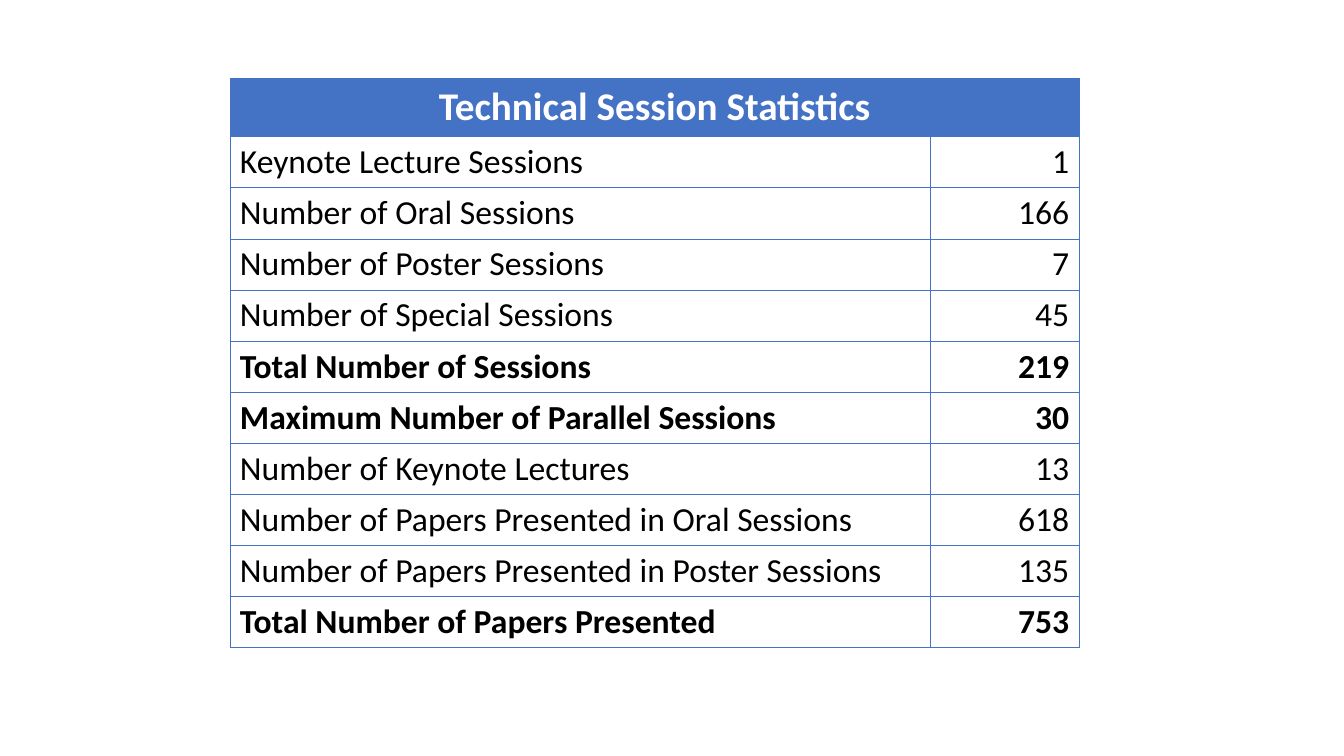
from dataclasses import dataclass

import pptx
import pptx.dml.color
import pptx.enum.text
import pptx.oxml
import pptx.oxml.ns
import pptx.table
import pptx.util

BLUE = pptx.dml.color.RGBColor(0x44, 0x72, 0xC4)
WHITE = pptx.dml.color.RGBColor(0xFF, 0xFF, 0xFF)
BLACK = pptx.dml.color.RGBColor(0x00, 0x00, 0x00)
FONT = "Calibri"
BORDER = pptx.util.Pt(0.5)
ALIGN = pptx.enum.text.PP_ALIGN

SLIDE_WIDTH = pptx.util.Inches(13.33)
SLIDE_HEIGHT = pptx.util.Inches(7.5)

# Table frame in percent of the slide
LEFT, TOP, HEIGHT = 17.1, 10.4, 74.3
LABEL_WIDTH, COUNT_WIDTH = 52.1, 11.1


@dataclass(frozen=True)
class Statistic:
    label: str
    count: int
    bold: bool = False


TITLE = "Technical Session Statistics"
STATISTICS = [
    Statistic("Keynote Lecture Sessions", 1),
    Statistic("Number of Oral Sessions", 166),
    Statistic("Number of Poster Sessions", 7),
    Statistic("Number of Special Sessions", 45),
    Statistic("Total Number of Sessions", 219, bold=True),
    Statistic("Maximum Number of Parallel Sessions", 30, bold=True),
    Statistic("Number of Keynote Lectures", 13),
    Statistic("Number of Papers Presented in Oral Sessions", 618),
    Statistic("Number of Papers Presented in Poster Sessions", 135),
    Statistic("Total Number of Papers Presented", 753, bold=True),
]


def across(percent: float) -> pptx.util.Emu:
    return pptx.util.Emu(round(SLIDE_WIDTH * percent / 100))


def down(percent: float) -> pptx.util.Emu:
    return pptx.util.Emu(round(SLIDE_HEIGHT * percent / 100))


def add_borders(cell: pptx.table._Cell) -> None:
    properties = cell._tc.get_or_add_tcPr()
    for side in ("lnL", "lnR", "lnT", "lnB"):
        properties.append(pptx.oxml.parse_xml(
            f'<a:{side} {pptx.oxml.ns.nsdecls("a")} w="{BORDER}">'
            f'<a:solidFill><a:srgbClr val="{BLUE}"/></a:solidFill></a:{side}>'
        ))


def write_cell(cell: pptx.table._Cell, text: str, align: ALIGN, size: int,
               color: pptx.dml.color.RGBColor, bold: bool) -> None:
    cell.text = text
    paragraph = cell.text_frame.paragraphs[0]
    paragraph.alignment = align
    paragraph.font.name = FONT
    paragraph.font.size = pptx.util.Pt(size)
    paragraph.font.bold = bold
    paragraph.font.color.rgb = color


def fill_statistic(table: pptx.table.Table, row: int, item: Statistic) -> None:
    columns = ((item.label, ALIGN.LEFT), (str(item.count), ALIGN.RIGHT))
    for column, (text, align) in enumerate(columns):
        cell = table.cell(row, column)
        add_borders(cell)
        cell.fill.background()
        write_cell(cell, text, align, 24, BLACK, item.bold)


def fill_title(table: pptx.table.Table) -> None:
    title = table.cell(0, 0)
    title.merge(table.cell(0, 1))
    for cell in table.rows[0].cells:
        add_borders(cell)
        cell.fill.solid()
        cell.fill.fore_color.rgb = BLUE
    write_cell(title, TITLE, ALIGN.CENTER, 28, WHITE, True)


def main() -> None:
    deck = pptx.Presentation()
    deck.slide_width, deck.slide_height = SLIDE_WIDTH, SLIDE_HEIGHT
    slide = deck.slides.add_slide(deck.slide_layouts[6])

    # Statistics table
    table = slide.shapes.add_table(
        len(STATISTICS) + 1, 2, across(LEFT), down(TOP),
        across(LABEL_WIDTH + COUNT_WIDTH), down(HEIGHT),
    ).table
    table.first_row = table.horz_banding = False
    table.columns[0].width = across(LABEL_WIDTH)
    table.columns[1].width = across(COUNT_WIDTH)

    # Title row, then one row per statistic
    fill_title(table)
    for row, item in enumerate(STATISTICS, start=1):
        fill_statistic(table, row, item)

    deck.save("out.pptx")


if __name__ == "__main__":
    main()
